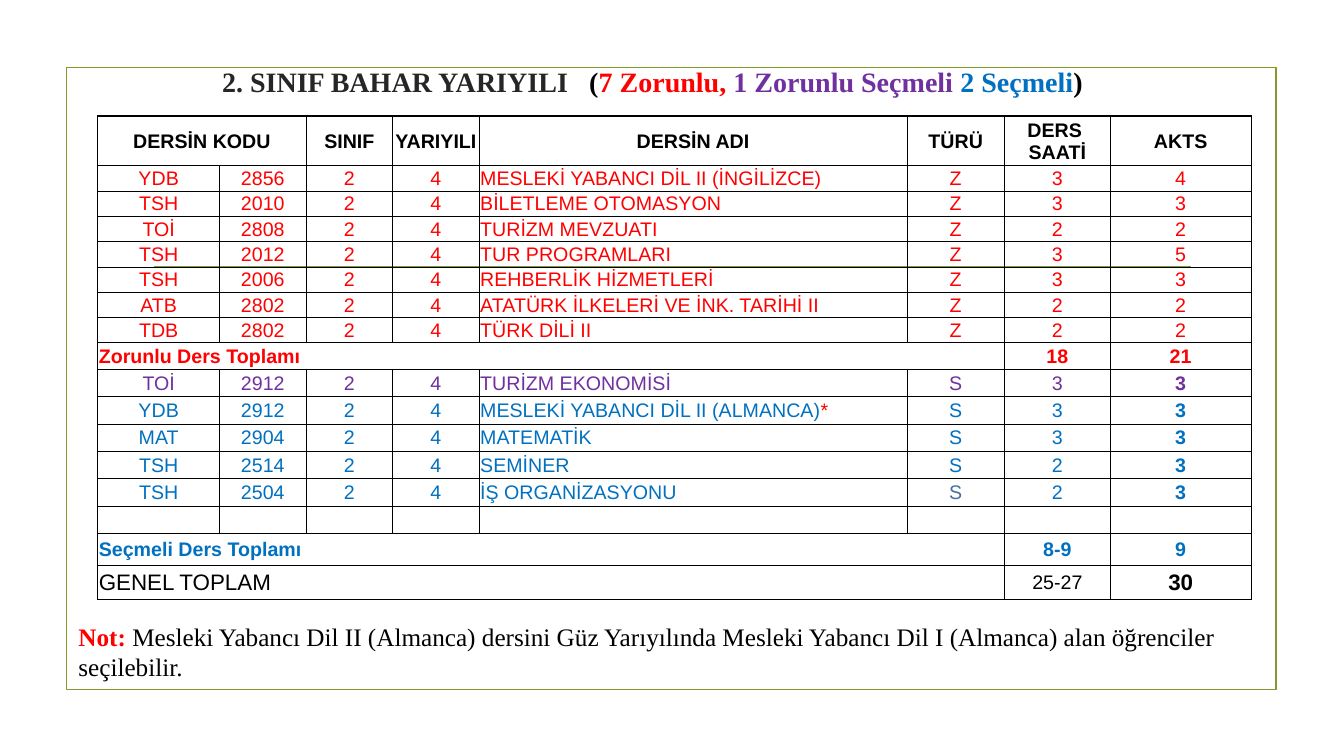
"""Build the course table slide for the second-year spring term."""
from lxml.etree import SubElement
from pptx import Presentation
from pptx.dml.color import RGBColor
from pptx.enum.shapes import MSO_CONNECTOR, MSO_SHAPE
from pptx.enum.text import MSO_ANCHOR, PP_ALIGN
from pptx.oxml.ns import qn
from pptx.util import Inches, Pt

BLACK = RGBColor(0x00, 0x00, 0x00)
CHARCOAL = RGBColor(0x26, 0x26, 0x26)
RED = RGBColor(0xFF, 0x00, 0x00)
PURPLE = RGBColor(0x70, 0x30, 0xA0)
BLUE = RGBColor(0x00, 0x70, 0xC0)
STEEL = RGBColor(0x44, 0x70, 0x9D)
OLIVE = RGBColor(0x83, 0x99, 0x2A)
SERIF, SANS = "Times New Roman", "Arial"


def write(para, text, size=14, font=SANS, color=BLACK, bold=False, gap=0):
    """Add one formatted span; gap is the extra letter spacing in points."""
    if not text:
        SubElement(para._p, qn("a:endParaRPr"), sz=str(size * 100))
        return
    span = para.add_run()
    span.text = text
    span.font.size, span.font.name = Pt(size), font
    span.font.color.rgb, span.font.bold = color, bold
    if gap:
        span._r.get_or_add_rPr().set("spc", str(gap * 100))


def set_borders(cell, **widths):
    """Draw black cell edges; widths maps L, R, T and B to points."""
    properties = cell._tc.get_or_add_tcPr()
    for place, (side, width) in enumerate(widths.items()):
        edge = SubElement(properties, qn(f"a:ln{side}"), w=str(Pt(width)))
        fill = SubElement(edge, qn("a:solidFill"))
        SubElement(fill, qn("a:srgbClr"), val=str(BLACK))
        properties.insert(place, edge)


deck = Presentation()
deck.slide_width, deck.slide_height = Inches(13.33), Inches(7.5)
page = deck.slides.add_slide(deck.slide_layouts[5])

frame = page.shapes.add_shape(
    MSO_SHAPE.RECTANGLE, Inches(0.66), Inches(0.67), Inches(12), Inches(6.17))
frame.shadow.inherit = False
frame.fill.background()
rule = page.shapes.add_connector(
    MSO_CONNECTOR.STRAIGHT, Inches(1.53), Inches(2.65), Inches(11.81), Inches(2.65))
SubElement(rule._element.spPr, qn("a:effectLst"))
for outline in (frame.line, rule.line):
    outline.color.rgb, outline.width = OLIVE, Pt(1.25)

title = page.shapes.title
title.left, title.top = Inches(1.55), Inches(0.52)
title.width, title.height = Inches(9.84), Inches(0.58)
title.text_frame.vertical_anchor = MSO_ANCHOR.MIDDLE
heading = title.text_frame.paragraphs[0]
heading.alignment = PP_ALIGN.CENTER
for text, color, gap in [
    ("2. SINIF BAHAR YARIYILI", CHARCOAL, 0),
    (" ", CHARCOAL, 10),
    ("(", BLACK, 0),
    ("7 Zorunlu, ", RED, 0),
    ("1 Zorunlu Seçmeli ", PURPLE, 0),
    ("2 Seçmeli", BLUE, 0),
    (")", BLACK, 0),
]:
    write(heading, text, size=20, font=SERIF, color=color, bold=True, gap=gap)

HEADER = ["DERSİN KODU", "", "SINIF", "YARIYILI", "DERSİN ADI", "TÜRÜ",
          "DERS \nSAATİ", "AKTS"]
COURSES = [
    ("YDB", "2856", "MESLEKİ YABANCI DİL II (İNGİLİZCE)", "Z", "3", "4", RED),
    ("TSH", "2010", "BİLETLEME OTOMASYON", "Z", "3", "3", RED),
    ("TOİ", "2808", "TURİZM MEVZUATI", "Z", "2", "2", RED),
    ("TSH", "2012", "TUR PROGRAMLARI", "Z", "3", "5", RED),
    ("TSH", "2006", "REHBERLİK HİZMETLERİ", "Z", "3", "3", RED),
    ("ATB", "2802", "ATATÜRK İLKELERİ VE İNK. TARİHİ II", "Z", "2", "2", RED),
    ("TDB", "2802", "TÜRK DİLİ II", "Z", "2", "2", RED),
    ("TOİ", "2912", "TURİZM EKONOMİSİ", "S", "3", "3", PURPLE),
    ("YDB", "2912", "MESLEKİ YABANCI DİL II (ALMANCA)", "S", "3", "3", BLUE),
    ("MAT", "2904", "MATEMATİK", "S", "3", "3", BLUE),
    ("TSH", "2514", "SEMİNER", "S", "2", "3", BLUE),
    ("TSH", "2504", "İŞ ORGANİZASYONU", "S", "2", "3", BLUE),
]
REQUIRED = 7
course_rows = [([code, number, "2", "4", *rest], color)
               for code, number, *rest, color in COURSES]
rows = [
    (HEADER, BLACK),
    *course_rows[:REQUIRED],
    (["Zorunlu Ders Toplamı", *[""] * 5, "18", "21"], RED),
    *course_rows[REQUIRED:],
    ([""] * 8, BLUE),
    (["Seçmeli Ders Toplamı", *[""] * 5, "8-9", "9"], BLUE),
    (["GENEL TOPLAM", *[""] * 5, "25-27", "30"], BLACK),
]
REQUIRED_TOTAL, ELECTIVE_TOTAL, GRAND_TOTAL = REQUIRED + 1, len(rows) - 2, len(rows) - 1
TOTALS = (REQUIRED_TOTAL, ELECTIVE_TOTAL, GRAND_TOTAL)
NAME, KIND, CREDITS = 4, 5, 7

WIDTHS = [1.21, 0.86, 0.86, 0.86, 4.25, 0.97, 1.05, 1.4]
HEIGHTS = [0.49, *[0.25] * 7, 0.26, *[0.27] * 6, 0.31, 0.34]
TABLE_WIDTH, TABLE_HEIGHT = 11.44, 4.8
table = page.shapes.add_table(
    len(rows), len(WIDTHS), Inches(0.97), Inches(1.15),
    Inches(TABLE_WIDTH), Inches(TABLE_HEIGHT)).table
table.first_row = table.horz_banding = False
for column, width in zip(table.columns, WIDTHS):
    column.width = Inches(TABLE_WIDTH * width / sum(WIDTHS))
for line, height in zip(table.rows, HEIGHTS):
    line.height = Inches(TABLE_HEIGHT * height / sum(HEIGHTS))

for r, (texts, row_color) in enumerate(rows):
    for c, text in enumerate(texts):
        cell = table.cell(r, c)
        cell.fill.background()
        cell.vertical_anchor = MSO_ANCHOR.MIDDLE
        cell.margin_left = cell.margin_right = cell.margin_top = Inches(0.01)
        cell.margin_bottom = 0
        last_cell = r == GRAND_TOTAL and c == CREDITS
        set_borders(
            cell,
            L=1 if c == 0 else 0.5,
            R=1 if c == CREDITS else 0.5,
            T=1 if r in (0, REQUIRED_TOTAL) else 0.5,
            B=1 if r == REQUIRED or last_cell else 0.5)

        left = (c == NAME and r > 0) or (c == 0 and r in TOTALS)
        bold = (r in (0, REQUIRED_TOTAL, ELECTIVE_TOTAL)
                or (c == CREDITS and r > REQUIRED_TOTAL))
        size = 16 if r == GRAND_TOTAL and c in (0, CREDITS) else 14
        color = STEEL if text == "S" and texts[NAME] == "İŞ ORGANİZASYONU" else row_color
        for n, part in enumerate(text.split("\n")):
            para = cell.text_frame.add_paragraph() if n else cell.text_frame.paragraphs[0]
            para.alignment = PP_ALIGN.LEFT if left else PP_ALIGN.CENTER
            write(para, part, size=size, color=color, bold=bold)
        if "ALMANCA" in text:
            write(para, "*", color=RED)

table.cell(0, 0).merge(table.cell(0, 1))
for r in TOTALS:
    table.cell(r, 0).merge(table.cell(r, KIND))

box = page.shapes.add_textbox(Inches(0.68), Inches(6.11), Inches(11.97), Inches(1.01))
box.text_frame.word_wrap = True
note = box.text_frame.paragraphs[0]
write(note, "Not: ", size=18, font=SERIF, color=RED, bold=True)
write(note, "Mesleki Yabancı Dil II (Almanca) dersini Güz Yarıyılında Mesleki "
      "Yabancı Dil I (Almanca) alan öğrenciler seçilebilir.", size=18, font=SERIF)

deck.save("out.pptx")
